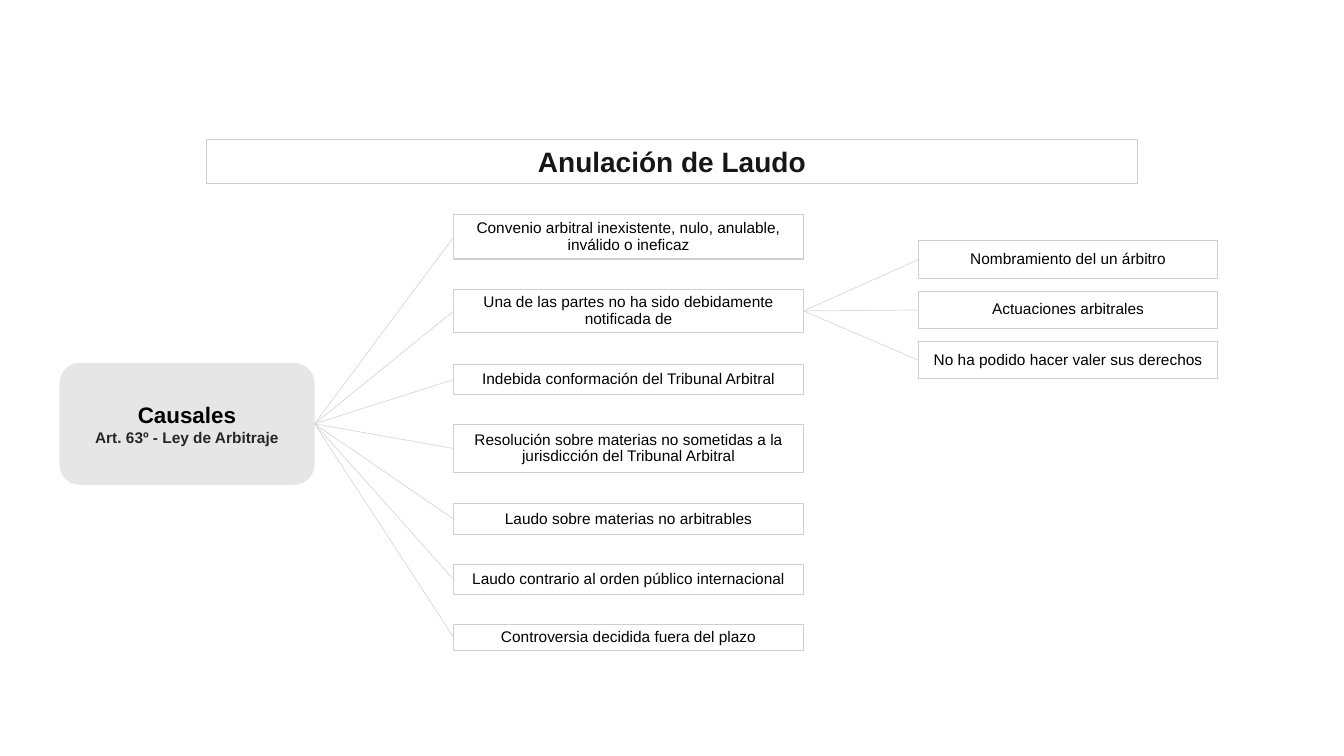
from lxml import etree
from pptx import Presentation
from pptx.dml.color import RGBColor
from pptx.enum.shapes import MSO_CONNECTOR, MSO_SHAPE
from pptx.enum.text import MSO_ANCHOR, MSO_AUTO_SIZE, PP_ALIGN
from pptx.oxml.ns import qn
from pptx.util import Inches, Pt

RECT = MSO_SHAPE.RECTANGLE
ROUND = MSO_SHAPE.ROUNDED_RECTANGLE
STRAIGHT = MSO_CONNECTOR.STRAIGHT
MIDDLE = MSO_ANCHOR.MIDDLE
CENTER = PP_ALIGN.CENTER
FIXED = MSO_AUTO_SIZE.NONE

BLACK = RGBColor(0x00, 0x00, 0x00)
INK = RGBColor(0x18, 0x17, 0x17)
GREY = RGBColor(0x26, 0x26, 0x26)
PALE = RGBColor(0xE7, 0xE6, 0xE6)
EDGE = RGBColor(0xD0, 0xCE, 0xCE)
LINK = RGBColor(0xD9, 0xD9, 0xD9)

LEFT_SITE, RIGHT_SITE = 1, 3

# Text, top and height of each box
CAUSES = [
    ("Convenio arbitral inexistente, nulo, anulable, inválido o ineficaz", 2.13, 0.44),
    ("Una de las partes no ha sido debidamente notificada de", 2.87, 0.43),
    ("Indebida conformación del Tribunal Arbitral", 3.62, 0.29),
    ("Resolución sobre materias no sometidas a la jurisdicción del Tribunal Arbitral",
     4.21, 0.48),
    ("Laudo sobre materias no arbitrables", 5.0, 0.3),
    ("Laudo contrario al orden público internacional", 5.6, 0.3),
    ("Controversia decidida fuera del plazo", 6.2, 0.25),
]
NOTICES = [
    "Nombramiento del un árbitro",
    "Actuaciones arbitrales",
    "No ha podido hacer valer sus derechos",
]


class Chart:
    """Draws the parts of the tree on one slide."""

    font = "Arial"

    def __init__(self, slide):
        self.slide = slide

    def label(self, para, text, size, color, bold=False):
        para.alignment = CENTER
        run = para.add_run()
        run.text = text
        run.font.name = self.font
        run.font.size = Pt(size)
        run.font.bold = bold
        run.font.color.rgb = color

    def edge(self, shape):
        shape.line.color.rgb = EDGE
        shape.line.width = Pt(0.75)

    def title(self, text, left, top, width, height):
        shape = self.slide.shapes.title
        shape.left, shape.top = Inches(left), Inches(top)
        shape.width, shape.height = Inches(width), Inches(height)
        self.edge(shape)
        frame = shape.text_frame
        frame.auto_size = FIXED
        frame.vertical_anchor = MIDDLE
        self.label(frame.paragraphs[0], text, 20, INK, True)

    def shape(self, kind, left, top, width, height):
        shape = self.slide.shapes.add_shape(
            kind, Inches(left), Inches(top), Inches(width), Inches(height))
        shape.shadow.inherit = False
        shape.text_frame.word_wrap = True
        shape.text_frame.vertical_anchor = MIDDLE
        return shape

    def root(self, head, note, *place):
        shape = self.shape(ROUND, *place)
        shape.fill.solid()
        shape.fill.fore_color.rgb = PALE
        shape.line.fill.background()
        frame = shape.text_frame
        self.label(frame.paragraphs[0], head, 16, BLACK, True)
        self.label(frame.add_paragraph(), note, 11, GREY, True)
        return shape

    def box(self, text, *place):
        shape = self.shape(RECT, *place)
        shape.fill.background()
        self.edge(shape)
        frame = shape.text_frame
        frame.margin_left = frame.margin_right = Inches(0.01)
        frame.margin_top = frame.margin_bottom = Inches(0.01)
        para = frame.paragraphs[0]
        para.line_spacing = 0.9
        self.label(para, text, 11, BLACK)
        return shape

    def link(self, start, end):
        line = self.slide.shapes.add_connector(STRAIGHT, 0, 0, 0, 0)
        line.begin_connect(start, RIGHT_SITE)
        line.end_connect(end, LEFT_SITE)
        line.line.color.rgb = LINK
        line.line.width = Pt(0.5)
        etree.SubElement(line._element.spPr, qn("a:effectLst"))


def main():
    deck = Presentation()
    deck.slide_width, deck.slide_height = Inches(13.33), Inches(7.5)
    chart = Chart(deck.slides.add_slide(deck.slide_layouts[5]))

    chart.title("Anulación de Laudo", 2.05, 1.38, 9.23, 0.44)
    root = chart.root("Causales", "Art. 63º - Ley de Arbitraje", 0.59, 3.6, 2.53, 1.21)
    causes = [chart.box(text, 4.5, top, 3.47, height) for text, top, height in CAUSES]
    notices = [chart.box(text, 9.11, 2.39 + 0.5 * row, 2.97, 0.37)
               for row, text in enumerate(NOTICES)]

    for cause in causes:
        chart.link(root, cause)
    for notice in notices:
        chart.link(causes[1], notice)

    deck.save("out.pptx")


if __name__ == "__main__":
    main()
